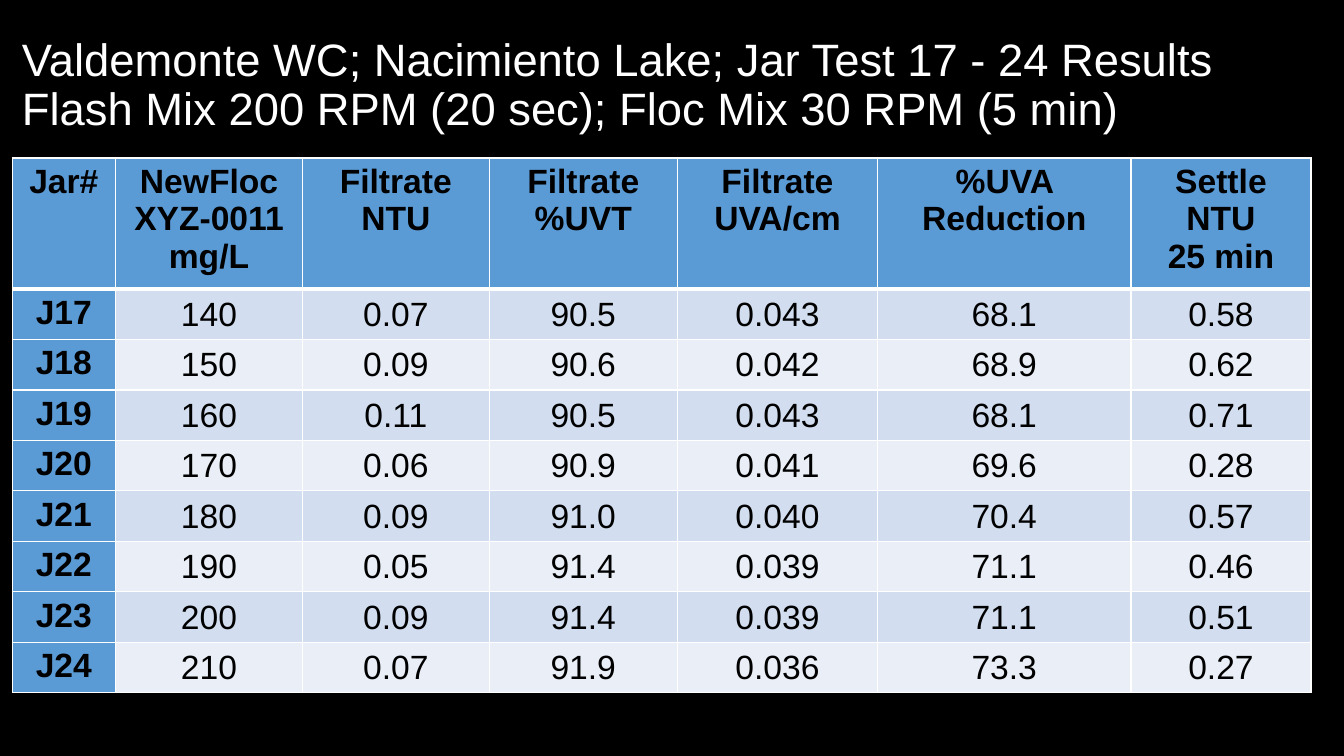
from lxml.etree import SubElement
from pptx import Presentation
from pptx.dml.color import RGBColor
from pptx.enum.text import MSO_ANCHOR as Anchor, PP_ALIGN as Align
from pptx.oxml.ns import qn
from pptx.util import Inches, Pt

TITLE = ("Valdemonte WC; Nacimiento Lake; Jar Test 17 - 24 Results\v"
         "Flash Mix 200 RPM (20 sec); Floc Mix 30 RPM (5 min)")
HEADINGS = ["Jar#", "NewFloc\nXYZ-0011\nmg/L", "Filtrate\nNTU", "Filtrate\n%UVT",
            "Filtrate\nUVA/cm", "%UVA Reduction", "Settle\nNTU\n25 min"]
JARS = [
    ["J17", "140", "0.07", "90.5", "0.043", "68.1", "0.58"],
    ["J18", "150", "0.09", "90.6", "0.042", "68.9", "0.62"],
    ["J19", "160", "0.11", "90.5", "0.043", "68.1", "0.71"],
    ["J20", "170", "0.06", "90.9", "0.041", "69.6", "0.28"],
    ["J21", "180", "0.09", "91.0", "0.040", "70.4", "0.57"],
    ["J22", "190", "0.05", "91.4", "0.039", "71.1", "0.46"],
    ["J23", "200", "0.09", "91.4", "0.039", "71.1", "0.51"],
    ["J24", "210", "0.07", "91.9", "0.036", "73.3", "0.27"],
]
COLUMN_PERCENTS = [7.7, 13.9, 13.9, 14.0, 14.9, 18.85, 13.4]
HEADING_PERCENT, JAR_PERCENT = 16.3, 6.3


def color(code):
    """Turn a hex string into a colour."""
    return RGBColor.from_string(code)


class ResultsSlide:
    """Hold the style and the current slide, measured in percent of its size."""

    font = "Arial"
    white, black = "FFFFFF", "000000"
    accent, bands = "5B9BD5", ("D2DEEF", "EAEFF7")
    thin, thick = 1, 3

    def __init__(self, deck):
        """Add a blank slide with a dark background."""
        self.width, self.height = deck.slide_width, deck.slide_height
        self.slide = deck.slides.add_slide(deck.slide_layouts[6])
        backdrop = self.slide.background.fill
        backdrop.solid()
        backdrop.fore_color.rgb = color(self.black)

    def across(self, percent):
        """Give a share of the slide's width."""
        return round(self.width * percent / 100)

    def down(self, percent):
        """Give a share of the slide's height."""
        return round(self.height * percent / 100)

    def wording(self, frame, content, size, ink, bold=False, align=Align.LEFT):
        """Fill a text frame and format its runs."""
        frame.text = content
        for paragraph in frame.paragraphs:
            paragraph.alignment = align
            for run in paragraph.runs:
                run.font.name, run.font.size, run.font.bold = self.font, Pt(size), bold
                run.font.color.rgb = color(ink)

    def title(self, content, left, top, width, height):
        """Place the slide's heading."""
        box = self.slide.shapes.add_textbox(
            self.across(left), self.down(top), self.across(width), self.down(height))
        frame = box.text_frame
        frame.word_wrap = True
        frame.vertical_anchor = Anchor.MIDDLE
        self.wording(frame, content, 32.4, self.white)
        frame.paragraphs[0].line_spacing = 0.9

    def borders(self, cell, above, below):
        """Draw the four white edges of a cell."""
        properties = cell._tc.get_or_add_tcPr()
        edges = {"lnL": self.thin, "lnR": self.thin, "lnT": above, "lnB": below}
        for edge, points in edges.items():
            line = SubElement(properties, qn(f"a:{edge}"), w=str(Pt(points)))
            SubElement(SubElement(line, qn("a:solidFill")), qn("a:srgbClr"), val=self.white)

    def cell(self, cell, content, row, column):
        """Style one cell by its place in the table."""
        is_label = row == 0 or column == 0
        if not is_label:
            cell.vertical_anchor = Anchor.MIDDLE
            cell.margin_left = cell.margin_right = cell.margin_top = Inches(0.01)
            cell.margin_bottom = 0
        self.wording(cell.text_frame, content, 24, self.black, is_label, Align.CENTER)
        self.borders(cell, self.thick if row == 1 else self.thin,
                     self.thick if row == 0 else self.thin)
        cell.fill.solid()
        cell.fill.fore_color.rgb = color(self.accent if is_label else self.bands[(row - 1) % 2])

    def table(self, rows, left, top, widths, heights):
        """Place a table with the given column and row sizes."""
        table = self.slide.shapes.add_table(
            len(rows), len(widths), self.across(left), self.down(top),
            self.across(sum(widths)), self.down(sum(heights))).table
        for column, width in zip(table.columns, widths):
            column.width = self.across(width)
        for row, height in zip(table.rows, heights):
            row.height = self.down(height)
        for r, contents in enumerate(rows):
            for c, content in enumerate(contents):
                self.cell(table.cell(r, c), content, r, c)


def main():
    """Build and save the jar test slide."""
    deck = Presentation()
    deck.slide_width, deck.slide_height = Inches(13.33), Inches(7.5)
    results = ResultsSlide(deck)
    results.title(TITLE, 0.9, 1.75, 97.75, 19.3)
    results.table([HEADINGS] + JARS, 0.9, 20.9, COLUMN_PERCENTS,
                  [HEADING_PERCENT] + [JAR_PERCENT] * len(JARS))
    deck.save("out.pptx")


if __name__ == "__main__":
    main()
